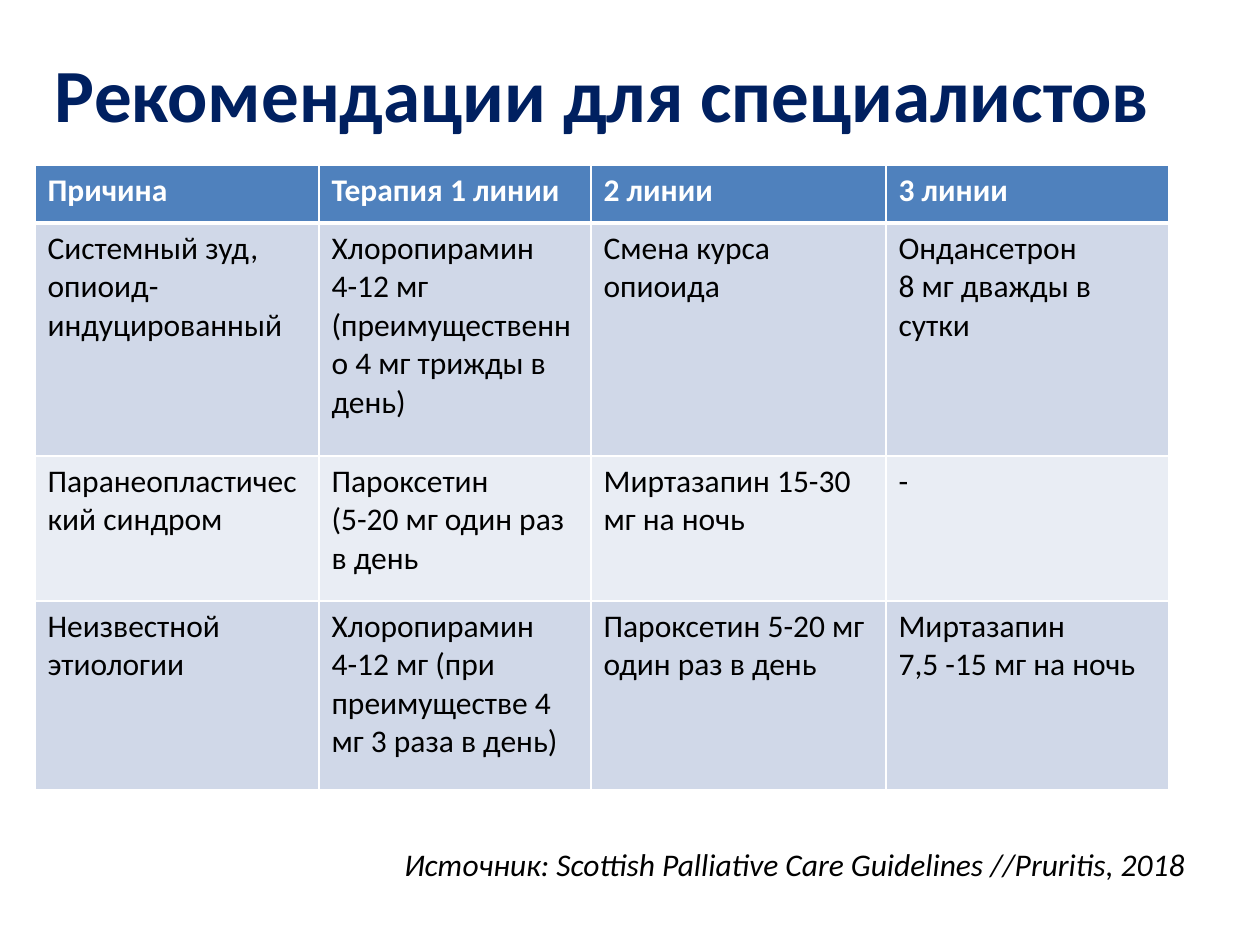
from dataclasses import dataclass

from lxml import etree
from pptx import Presentation
from pptx.dml.color import RGBColor
from pptx.enum.text import MSO_ANCHOR, MSO_AUTO_SIZE, PP_ALIGN
from pptx.oxml.ns import qn
from pptx.util import Emu, Pt

LEFT = PP_ALIGN.LEFT
CENTER = PP_ALIGN.CENTER
TOP = MSO_ANCHOR.TOP
MIDDLE = MSO_ANCHOR.MIDDLE
NO_RESIZE = MSO_AUTO_SIZE.NONE
GROW = MSO_AUTO_SIZE.SHAPE_TO_FIT_TEXT

EMU_PER_INCH = 914400
PX_PER_INCH = 126


@dataclass(frozen=True)
class Theme:
    font: str = "Calibri"
    title_size: float = 42.9
    body_size: float = 18
    title: str = "002060"
    text: str = "000000"
    inverse: str = "FFFFFF"
    header: str = "4F81BD"
    bands: tuple = ("D0D8E8", "E9EDF4")
    thin_border: int = 1
    thick_border: int = 3


def px(length):
    return Emu(round(length * EMU_PER_INCH / PX_PER_INCH))


class SlideBuilder:
    def __init__(self, slide, theme):
        self.slide = slide
        self.theme = theme

    def fill_text(self, frame, text, color, size, align=LEFT, **formats):
        frame.text = text
        values = {"name": self.theme.font, "size": Pt(size), **formats}
        for paragraph in frame.paragraphs:
            paragraph.alignment = align
            for run in paragraph.runs:
                for name, value in values.items():
                    setattr(run.font, name, value)
                run.font.color.rgb = RGBColor.from_string(color)

    def text(self, box, text, color, size, frame_formats, **formats):
        shape = self.slide.shapes.add_textbox(*map(px, box))
        for name, value in frame_formats.items():
            setattr(shape.text_frame, name, value)
        self.fill_text(shape.text_frame, text, color, size, **formats)

    def borders(self, cell, top, bottom):
        thin = self.theme.thin_border
        properties = cell._tc.get_or_add_tcPr()
        widths = {"a:lnL": thin, "a:lnR": thin, "a:lnT": top, "a:lnB": bottom}
        for tag, width in widths.items():
            line = etree.SubElement(properties, qn(tag), w=str(Pt(width)))
            fill = etree.SubElement(line, qn("a:solidFill"))
            etree.SubElement(fill, qn("a:srgbClr"), val=self.theme.inverse)

    def table(self, left, top, widths, heights, rows):
        theme = self.theme
        box = (left, top, sum(widths), sum(heights))
        frame = self.slide.shapes.add_table(len(rows), len(widths), *map(px, box))
        table = frame.table
        for column, width in zip(table.columns, widths):
            column.width = px(width)
        for row, height in zip(table.rows, heights):
            row.height = px(height)
        for row_index, texts in enumerate(rows):
            is_header = row_index == 0
            fill = theme.header if is_header else theme.bands[(row_index - 1) % 2]
            color = theme.inverse if is_header else theme.text
            upper = theme.thick_border if row_index == 1 else theme.thin_border
            lower = theme.thick_border if is_header else theme.thin_border
            for column_index, text in enumerate(texts):
                cell = table.cell(row_index, column_index)
                self.borders(cell, upper, lower)
                cell.fill.solid()
                cell.fill.fore_color.rgb = RGBColor.from_string(fill)
                self.fill_text(cell.text_frame, text, color, theme.body_size, bold=is_header)


TREATMENTS = [
    ("Причина", "Терапия 1 линии", "2 линии", "3 линии"),
    (
        "Системный зуд, опиоид-индуцированный",
        "Хлоропирамин\n4-12 мг (преимущественно 4 мг трижды в день)",
        "Смена курса опиоида",
        "Ондансетрон\n8 мг дважды в сутки",
    ),
    (
        "Паранеопластический синдром",
        "Пароксетин\n(5-20 мг один раз в день",
        "Миртазапин 15-30 мг на ночь",
        "-",
    ),
    (
        "Неизвестной этиологии",
        "Хлоропирамин\n4-12 мг (при преимуществе 4 мг 3 раза в день)",
        "Пароксетин 5-20 мг один раз в день",
        "Миртазапин\n7,5 -15 мг на ночь",
    ),
]


def main():
    presentation = Presentation()
    presentation.slide_width = px(1260)
    presentation.slide_height = px(945)
    slide = presentation.slides.add_slide(presentation.slide_layouts[6])
    theme = Theme()
    builder = SlideBuilder(slide, theme)

    builder.table(35, 165, (284, 272, 295, 283), (58, 233, 145, 189), TREATMENTS)
    builder.text(
        (35, 37, 1134, 110),
        "Рекомендации для специалистов",
        theme.title,
        theme.title_size,
        {"word_wrap": True, "auto_size": NO_RESIZE, "vertical_anchor": MIDDLE},
        align=CENTER,
        bold=True,
    )
    builder.text(
        (392, 839, 816, 50),
        "Источник: Scottish Palliative Care Guidelines //Pruritis, 2018",
        theme.text,
        theme.body_size,
        {"word_wrap": False, "auto_size": GROW, "vertical_anchor": TOP},
        italic=True,
    )
    presentation.save("out.pptx")


if __name__ == "__main__":
    main()
